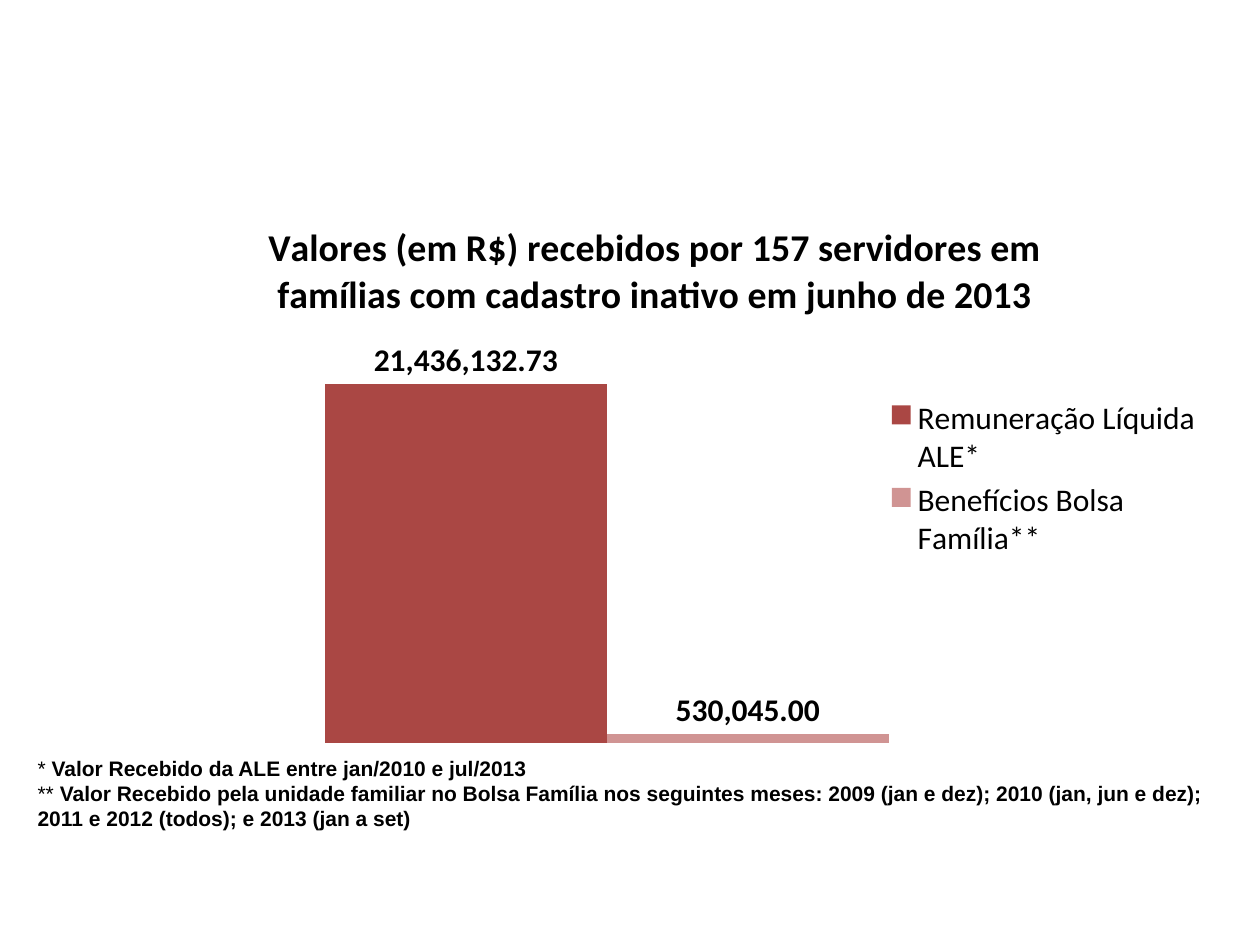
from lxml import etree
from pptx import Presentation
from pptx.chart.data import CategoryChartData
from pptx.dml.color import RGBColor
from pptx.enum.chart import XL_CHART_TYPE, XL_LABEL_POSITION, XL_LEGEND_POSITION
from pptx.enum.text import MSO_AUTO_SIZE
from pptx.oxml import parse_xml
from pptx.oxml.ns import nsdecls, qn
from pptx.util import Inches, Pt

COLUMNS = XL_CHART_TYPE.COLUMN_CLUSTERED
OUTSIDE_END = XL_LABEL_POSITION.OUTSIDE_END
LEGEND_RIGHT = XL_LEGEND_POSITION.RIGHT
GROW = MSO_AUTO_SIZE.SHAPE_TO_FIT_TEXT

SLIDE_SIZE = Inches(10), Inches(7.5)
CHART_SHARES = 0.075, 0.207, 0.89, 0.599
NOTES_SHARES = 0.02, 0.793, 0.961, 0.095
PLOT_SHARES = {"x": 0.017, "y": 0.227, "w": 0.88, "h": 0.741}

MONEY = "#,##0.00"
BLACK = "000000"
TITLE = ("Valores (em R$) recebidos por 157 servidores em "
         "famílias com cadastro inativo em junho de 2013")
AMOUNTS = [
    ("Remuneração Líquida ALE*", 21436132.73, "AA4744"),
    ("Benefícios Bolsa Família**", 530045, "D09493"),
]
NOTES = [
    ("* ", "Valor Recebido da ALE entre jan/2010 e jul/2013"),
    ("** ", "Valor Recebido pela unidade familiar no Bolsa Família nos "
            "seguintes meses: 2009 (jan e dez); 2010 (jan, jun e dez); "
            "2011 e 2012 (todos); e 2013 (jan a set)"),
]


def color(hex_code):
    return RGBColor.from_string(hex_code)


def place(shares):
    """Turn shares of the slide into left, top, width and height."""
    return [int(share * SLIDE_SIZE[i % 2]) for i, share in enumerate(shares)]


def style(font, name, size, bold=False):
    font.name = name
    font.size = Pt(size)
    font.bold = bold
    font.color.rgb = color(BLACK)


def set_plot_area(chart):
    """Fix the inner plot area as shares of the chart."""
    plot_area = chart.element.find(".//" + qn("c:plotArea"))
    for old in plot_area.findall(qn("c:layout")):
        plot_area.remove(old)
    layout = parse_xml(f"<c:layout {nsdecls('c')}><c:manualLayout/></c:layout>")
    settings = {"layoutTarget": "inner", "xMode": "edge", "yMode": "edge"}
    for tag, value in {**settings, **PLOT_SHARES}.items():
        etree.SubElement(layout[0], qn("c:" + tag), val=str(value))
    plot_area.insert(0, layout)


def add_amounts_chart(slide):
    amounts = CategoryChartData(number_format=MONEY)
    amounts.categories = ["1"]
    for name, value, _ in AMOUNTS:
        amounts.add_series(name, [value])
    chart = slide.shapes.add_chart(COLUMNS, *place(CHART_SHARES), amounts).chart
    style(chart.font, "Calibri", 18)

    heading = chart.chart_title.text_frame.paragraphs[0].add_run()
    heading.text = TITLE
    style(heading.font, "Calibri", 21.6, bold=True)
    chart.chart_title.include_in_layout = False

    chart.has_legend = True
    chart.legend.position = LEGEND_RIGHT
    chart.legend.include_in_layout = False
    style(chart.legend.font, "Calibri", 18)

    chart.value_axis.has_major_gridlines = False
    chart.value_axis.minimum_scale = 0
    chart.value_axis.maximum_scale = 25_000_000
    for axis in (chart.category_axis, chart.value_axis):
        axis.visible = False

    columns = chart.plots[0]
    columns.gap_width = 150
    columns.overlap = 0
    columns.vary_by_categories = False
    for series, (_, _, fill) in zip(columns.series, AMOUNTS):
        series.format.fill.solid()
        series.format.fill.fore_color.rgb = color(fill)
        labels = series.data_labels
        labels.show_value = True
        labels.number_format = MONEY
        labels.number_format_is_linked = False
        labels.position = OUTSIDE_END
        style(labels.font, "Calibri", 18, bold=True)
    set_plot_area(chart)


def add_notes(slide):
    frame = slide.shapes.add_textbox(*place(NOTES_SHARES)).text_frame
    frame.word_wrap = True
    frame.auto_size = GROW
    for i, (mark, note) in enumerate(NOTES):
        paragraph = frame.add_paragraph() if i else frame.paragraphs[0]
        for text, bold in ((mark, False), (note, True)):
            run = paragraph.add_run()
            run.text = text
            style(run.font, "Arial", 12, bold)


def main():
    deck = Presentation()
    deck.slide_width, deck.slide_height = SLIDE_SIZE
    slide = deck.slides.add_slide(deck.slide_layouts[6])
    add_amounts_chart(slide)
    add_notes(slide)
    deck.save("out.pptx")


if __name__ == "__main__":
    main()
